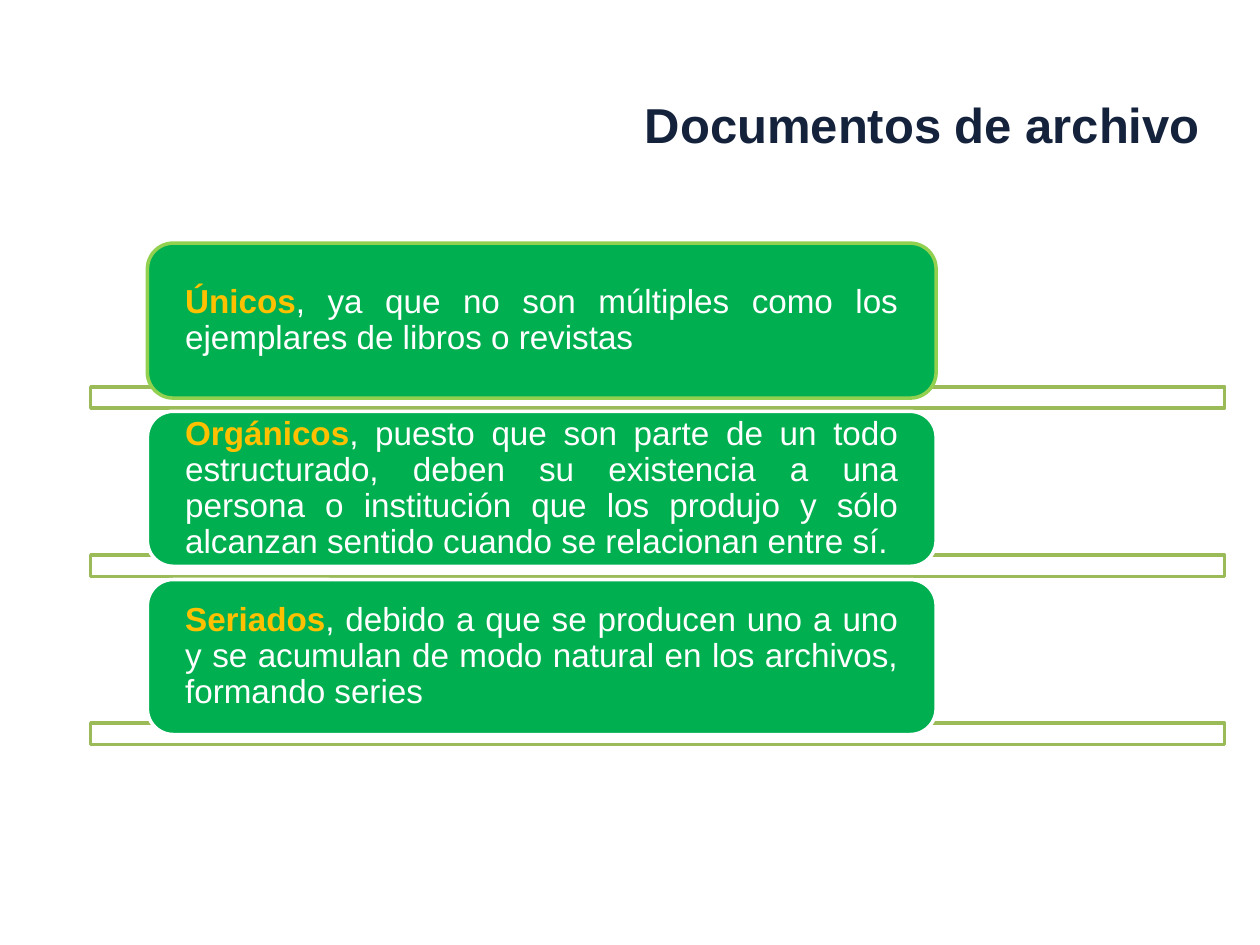
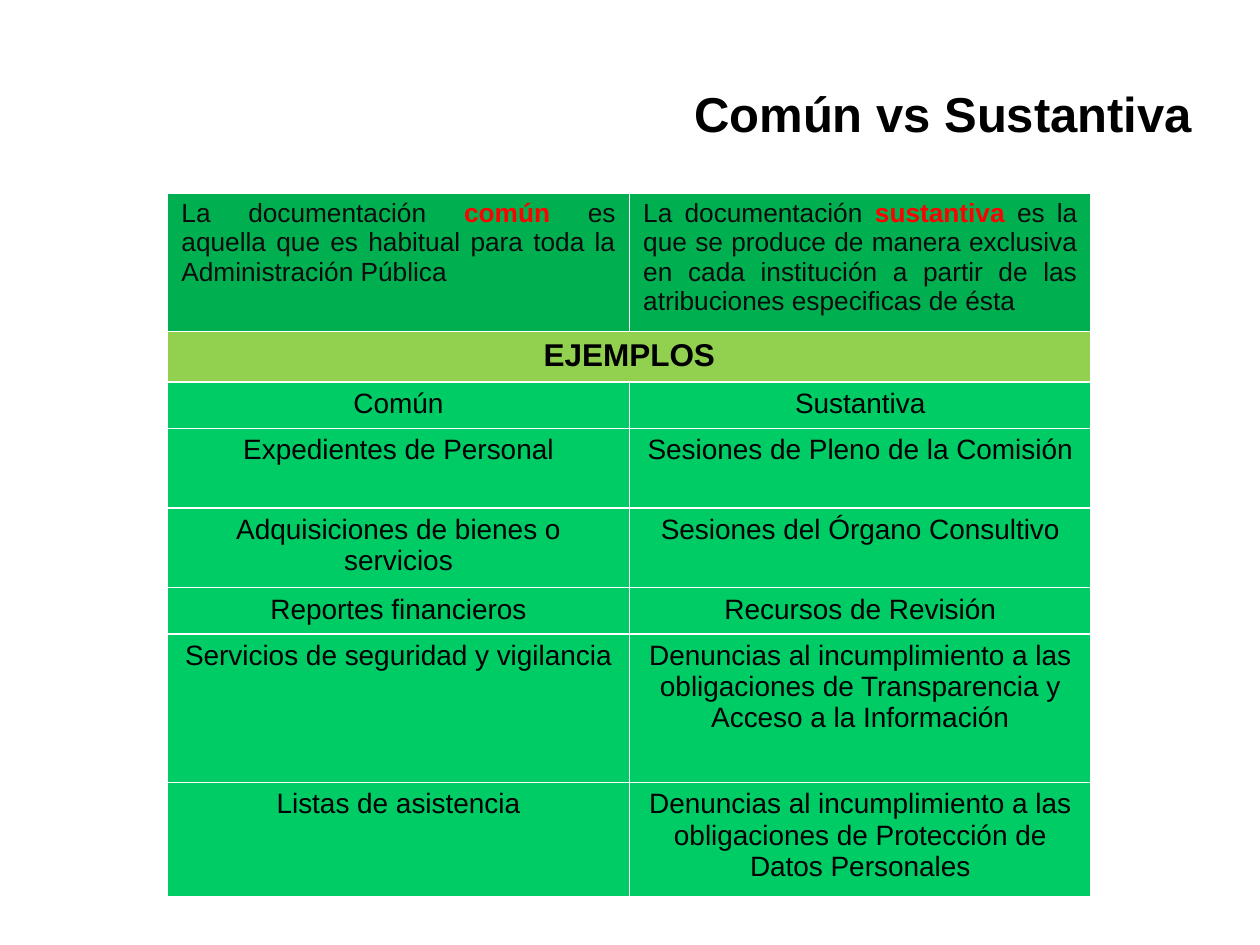
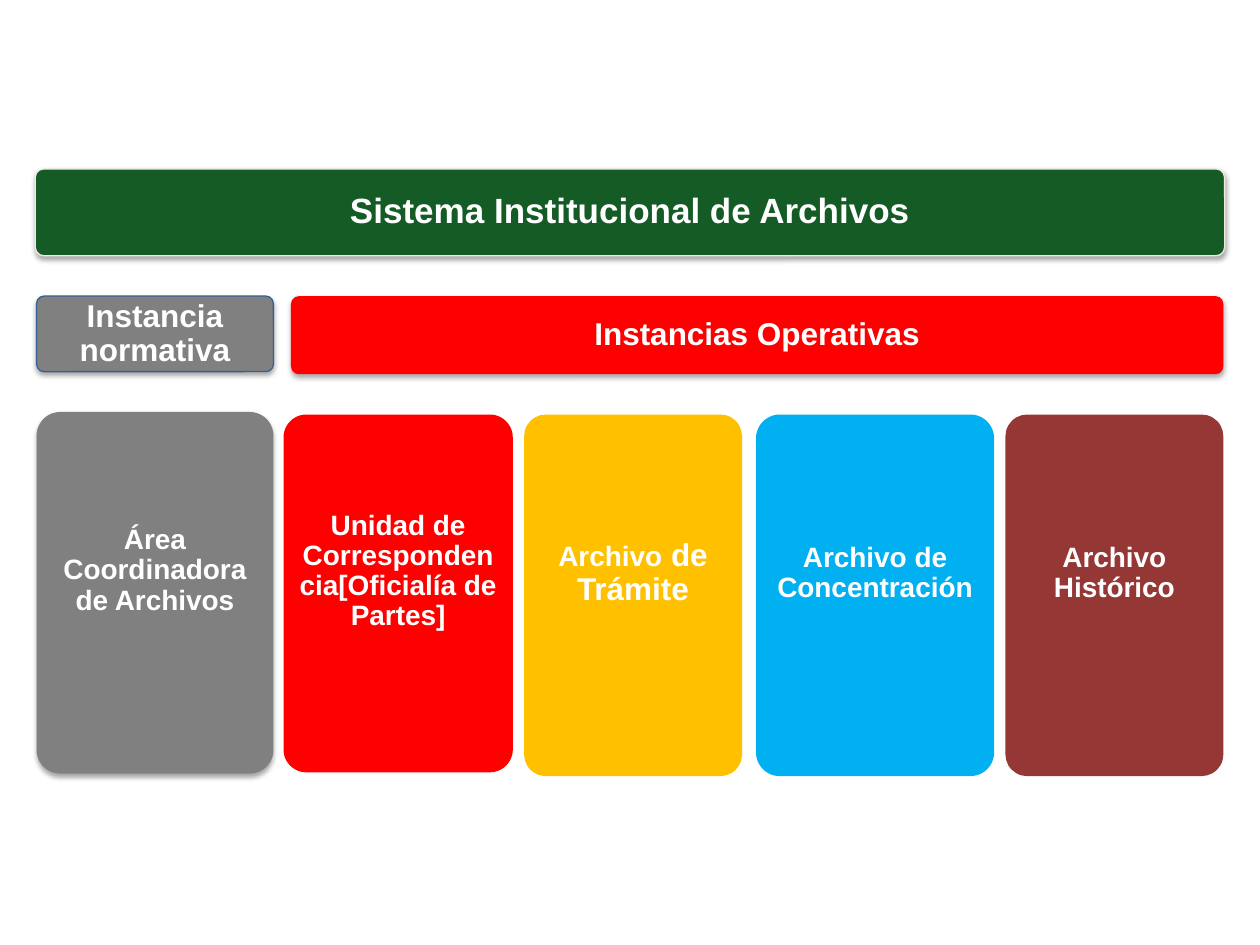
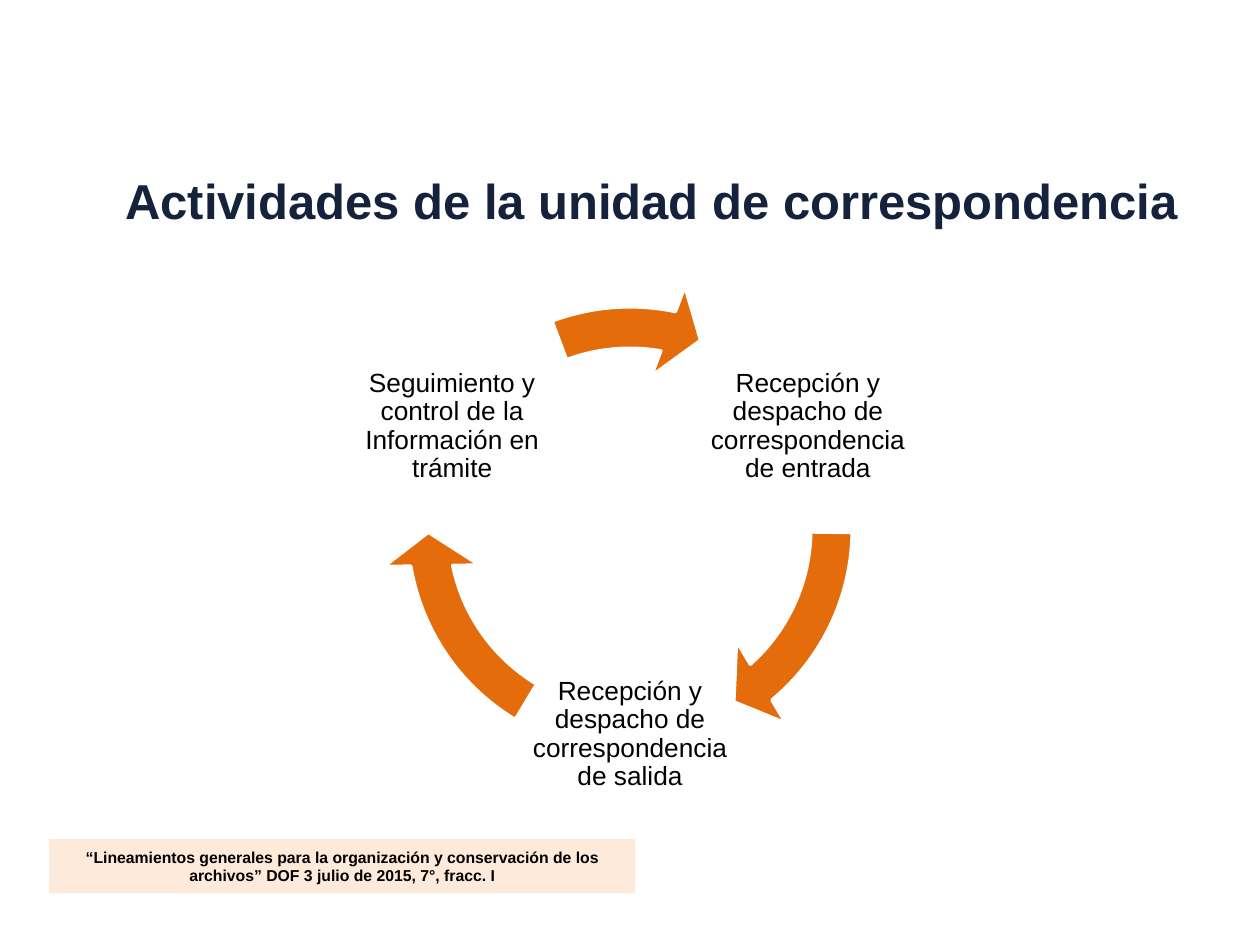
"""Build four slides about archive documents and the archive system."""
from math import cos, radians, sin

from lxml import etree
from pptx import Presentation
from pptx.dml.color import RGBColor
from pptx.enum.shapes import MSO_SHAPE
from pptx.enum.text import MSO_ANCHOR, PP_ALIGN
from pptx.oxml.ns import qn
from pptx.util import Inches, Pt

RECTANGLE, ROUNDED = MSO_SHAPE.RECTANGLE, MSO_SHAPE.ROUNDED_RECTANGLE
CIRCULAR_ARROW = MSO_SHAPE.CIRCULAR_ARROW
CENTER, JUSTIFY = PP_ALIGN.CENTER, PP_ALIGN.JUSTIFY
MIDDLE = MSO_ANCHOR.MIDDLE

SLIDE_WIDTH, SLIDE_HEIGHT = 10, 7.5
FONT = "Arial"
NAVY, BLACK, WHITE, INK = "15223C", "000000", "FFFFFF", "0D0D0D"
GREEN, LIME, MINT, OLIVE, FOREST = "00B050", "92D050", "00CC66", "9BBB59", "155B26"
GOLD, RED, GRAY, BLUE, MAROON = "FFC000", "FF0000", "808080", "00B0F0", "953735"
ORANGE, PEACH, STEEL, CREAM = "E46C0A", "FDEADA", "376092", "EEECE1"
DEFAULT_INSETS = (0.1, 0.05, 0.1, 0.05)

TRAITS = [
    ("Únicos", ", ya que no son múltiples como los ejemplares de libros o revistas", LIME),
    ("Orgánicos", ", puesto que son parte de un todo estructurado, deben su existencia a una "
     "persona o institución que los produjo y sólo alcanzan sentido cuando se relacionan "
     "entre sí.", WHITE),
    ("Seriados", ", debido a que se producen uno a uno y se acumulan de modo natural en los "
     "archivos, formando series", WHITE),
]

DEFINITIONS = [
    ("La documentación ", "común ",
     "es aquella que es habitual para toda la Administración Pública"),
    ("La documentación ", "sustantiva ",
     "es la que se produce de manera exclusiva en cada institución a partir de las "
     "atribuciones especificas de ésta"),
]
EXAMPLES_HEADER = "EJEMPLOS"
EXAMPLES = [
    ("Común", "Sustantiva"),
    ("Expedientes de Personal", "Sesiones de Pleno de la Comisión"),
    ("Adquisiciones de bienes o servicios", "Sesiones del Órgano Consultivo"),
    ("Reportes financieros", "Recursos de Revisión"),
    ("Servicios de seguridad y vigilancia",
     "Denuncias al incumplimiento a las obligaciones de Transparencia y Acceso a la Información"),
    ("Listas de asistencia",
     "Denuncias al incumplimiento a las obligaciones de Protección de Datos Personales"),
]
EXAMPLE_HEIGHTS = [0.38, 0.37, 0.63, 0.63, 0.36, 1.18, 0.91]

BANDS = [
    ("Sistema Institucional de Archivos", 20, (0.28, 1.34, 9.44, 0.69), FOREST, CREAM),
    ("Instancia normativa", 18, (0.29, 2.35, 1.88, 0.6), GRAY, STEEL),
    ("Instancias Operativas", 18, (2.31, 2.35, 7.4, 0.62), RED, None),
]
CARDS = [
    ([("Área Coordinadora de Archivos", 16)], (0.29, 3.27, 1.88, 2.87), GRAY, True),
    ([("Unidad de Correspondencia[Oficialía de Partes]", 16)],
     (2.25, 3.29, 1.82, 2.84), RED, False),
    ([("Archivo", 16), (" de Trámite", 18)], (4.16, 3.29, 1.73, 2.87), GOLD, False),
    ([("Archivo de Concentración", 16)], (6, 3.29, 1.89, 2.87), BLUE, False),
    ([("Archivo Histórico", 16)], (7.98, 3.29, 1.73, 2.87), MAROON, False),
]

ACTIVITIES = [
    ("Recepción y despacho de correspondencia de entrada", -30, (0.88, 49.37)),
    ("Recepción y despacho de correspondencia de salida", 90, (121.02, 169.52)),
    ("Seguimiento y control de la Información en trámite", 210, (249.47, 280.92)),
]
SOURCE = ("“Lineamientos generales para la organización y conservación de los archivos” "
          "DOF 3 julio de 2015, 7°, fracc. I")


def color(value):
    return RGBColor.from_string(value)


def box(area):
    return [Inches(length) for length in area]


def write(text_frame, runs, align=CENTER, spacing=None):
    """Write runs of (text, size, colour, bold) as one paragraph."""
    paragraph = text_frame.paragraphs[0]
    paragraph.alignment = align
    if spacing:
        paragraph.line_spacing = spacing
    for text, size, shade, bold in runs:
        run = paragraph.add_run()
        run.text = text
        run.font.name = FONT
        run.font.size = Pt(size)
        run.font.bold = bold
        run.font.color.rgb = color(shade)


def fill_frame(shape, runs, align=CENTER, spacing=None, insets=DEFAULT_INSETS):
    text_frame = shape.text_frame
    text_frame.word_wrap = True
    text_frame.vertical_anchor = MIDDLE
    (text_frame.margin_left, text_frame.margin_top,
     text_frame.margin_right, text_frame.margin_bottom) = box(insets)
    write(text_frame, runs, align, spacing)


def add_text(slide, area, runs, **layout):
    fill_frame(slide.shapes.add_textbox(*box(area)), runs, **layout)


def add_title(slide, text, area, shade=NAVY):
    add_text(slide, area, [(text, 28, shade, True)])


def add_figure(slide, kind, area, fill, line=None, width=2.0, adjustments=()):
    shape = slide.shapes.add_shape(kind, *box(area))
    shape.shadow.inherit = False
    shape.fill.solid()
    shape.fill.fore_color.rgb = color(fill)
    if line:
        shape.line.color.rgb = color(line)
        shape.line.width = Pt(width)
    else:
        shape.line.fill.background()
    for index, value in enumerate(adjustments):
        shape.adjustments[index] = value
    return shape


def add_shadow(shape):
    effects = shape._element.spPr.find(qn("a:effectLst"))
    shadow = etree.SubElement(effects, qn("a:outerShdw"), blurRad=str(Pt(3.1)),
                              dist=str(Pt(1.8)), dir="5400000", rotWithShape="0")
    shade = etree.SubElement(shadow, qn("a:srgbClr"), val=BLACK)
    etree.SubElement(shade, qn("a:alpha"), val="35000")


def add_grid(slide, top, heights):
    left, width = 1.33, 7.33
    table = slide.shapes.add_table(
        len(heights), 2, *box((left, top, width, sum(heights)))).table
    for row, height in zip(table.rows, heights):
        row.height = Inches(height)
    return table


def fill_cell(cell, fill, runs, align=CENTER):
    cell.fill.solid()
    cell.fill.fore_color.rgb = color(fill)
    write(cell.text_frame, runs, align)


def build_traits(slide):
    add_title(slide, "Documentos de archivo", (4.92, 0.77, 4.8, 0.43))
    first_top, pitch, bar_drop = 1.93, 1.335, 1.14
    for index, (name, description, outline) in enumerate(TRAITS):
        top = first_top + index * pitch
        add_figure(slide, RECTANGLE, (0.72, top + bar_drop, 9, 0.17), WHITE, OLIVE)
        card = add_figure(slide, ROUNDED, (1.17, top, 6.26, 1.23), GREEN, outline)
        fill_frame(card, [(name, 19, GOLD, True), (description, 19, WHITE, False)],
                   JUSTIFY, 0.9, (0.24, 0, 0.24, 0))


def build_comparison(slide):
    add_title(slide, "Común vs Sustantiva", (5.24, 0.68, 4.49, 0.43), BLACK)
    definitions = add_grid(slide, 1.53, [1.01])
    for column, (opening, term, ending) in enumerate(DEFINITIONS):
        cell = definitions.cell(0, column)
        cell.margin_left = cell.margin_right = Inches(0.11)
        fill_cell(cell, GREEN, [(opening, 15, INK, False), (term, 15, RED, True),
                                (ending, 15, INK, False)], JUSTIFY)
    examples = add_grid(slide, 2.63, EXAMPLE_HEIGHTS)
    header = examples.cell(0, 0)
    header.merge(examples.cell(0, 1))
    fill_cell(header, LIME, [(EXAMPLES_HEADER, 18, BLACK, True)])
    for row, pair in enumerate(EXAMPLES, start=1):
        for column, text in enumerate(pair):
            fill_cell(examples.cell(row, column), MINT, [(text, 16, BLACK, False)])


def build_system(slide):
    inset, lift = 0.07, 0.35
    for text, size, area, fill, outline in BANDS:
        band = add_figure(slide, ROUNDED, area, fill, outline, 0.75, [0.1])
        add_shadow(band)
        fill_frame(band, [(text, size, WHITE, True)], spacing=0.9, insets=[inset] * 4)
    for parts, area, fill, raised in CARDS:
        card = add_figure(slide, ROUNDED, area, fill, adjustments=[0.1])
        if raised:
            add_shadow(card)
        fill_frame(card, [(text, size, WHITE, True) for text, size in parts],
                   spacing=0.9, insets=(inset, inset, inset, inset + lift))


def build_cycle(slide):
    add_title(slide, "Actividades de la unidad de correspondencia", (0.67, 1.37, 9, 0.43))
    center_x, center_y, radius = SLIDE_WIDTH / 2, 4.2, 1.63
    label, ring = 1.68, 3.96
    ring_area = (center_x - ring / 2, center_y - ring / 2, ring, ring)
    degree = 0.6
    for text, angle, (start, end) in ACTIVITIES:
        left = center_x + radius * cos(radians(angle)) - label / 2
        top = center_y + radius * sin(radians(angle)) - label / 2
        add_text(slide, (left, top, label, label), [(text, 15, BLACK, False)],
                 spacing=0.9, insets=[0.02] * 4)
        add_figure(slide, CIRCULAR_ARROW, ring_area, ORANGE, WHITE,
                   adjustments=[0.083, 9.61 * degree, end * degree, start * degree, 0.096])
    note = add_figure(slide, RECTANGLE, (0.39, 6.66, 4.65, 0.43), PEACH)
    fill_frame(note, [(SOURCE, 9, BLACK, True)])


def main():
    presentation = Presentation()
    presentation.slide_width = Inches(SLIDE_WIDTH)
    presentation.slide_height = Inches(SLIDE_HEIGHT)
    blank = presentation.slide_layouts[6]
    for build in (build_traits, build_comparison, build_system, build_cycle):
        build(presentation.slides.add_slide(blank))
    presentation.save("out.pptx")


if __name__ == "__main__":
    main()
